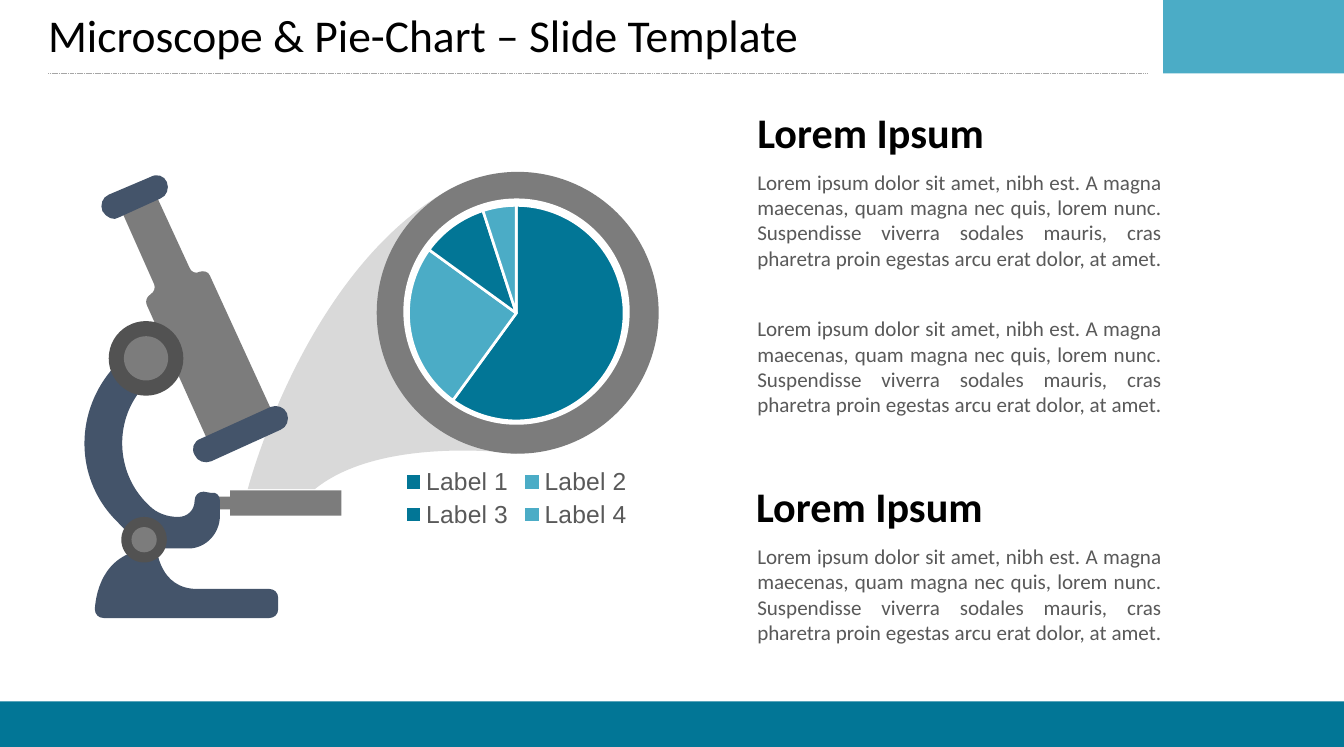
import pptx
import pptx.chart.data
import pptx.dml.color
import pptx.enum.chart
import pptx.enum.dml
import pptx.enum.shapes
import pptx.enum.text
import pptx.oxml
import pptx.util
from pptx.util import Inches

SHAPE = pptx.enum.shapes.MSO_SHAPE
ALIGN = pptx.enum.text.PP_ALIGN
ANCHOR = pptx.enum.text.MSO_ANCHOR
FIT = pptx.enum.text.MSO_AUTO_SIZE
NS_A = 'xmlns:a="http://schemas.openxmlformats.org/drawingml/2006/main"'
NS_C = 'xmlns:c="http://schemas.openxmlformats.org/drawingml/2006/chart"'
TEAL, SKY, NAVY = "027696", "4BACC6", "44546A"
GRAY, DARK, BEAM = "7C7C7C", "525252", "D9D9D9"
BLACK, WHITE, TEXT, RULE = "000000", "FFFFFF", "595959", "A6A6A6"

LOREM = ("Lorem ipsum dolor sit amet, nibh est. A magna maecenas, quam magna nec quis, "
         "lorem nunc. Suspendisse viverra sodales mauris, cras pharetra proin egestas "
         "arcu erat dolor, at amet. ")

# Outlines: a pair of numbers is a line to a point, six numbers are a cubic curve.
LIGHT_BEAM = [(1.96, 3.87), (1.96, 3.87, 2.41, 2.13, 3.57, 1.49), (4.09, 3.59),
              (4.09, 3.59, 3.02, 3.44, 2.49, 3.87)]
TUBE = [(1.22, 2.25), (0.94, 1.62), (1.21, 1.49), (1.5, 2.12),
        (1.51, 2.15, 1.55, 2.17, 1.58, 2.15), (1.61, 2.14, 1.65, 2.15, 1.66, 2.18),
        (2.2, 3.36), (1.69, 3.59), (1.16, 2.41),
        (1.15, 2.38, 1.16, 2.35, 1.19, 2.33), (1.22, 2.31, 1.23, 2.28, 1.22, 2.25)]
OBJECTIVE = [(1.67, 3.65), (2.22, 3.4), (2.27, 3.38, 2.29, 3.32, 2.27, 3.27),
             (2.25, 3.22, 2.19, 3.2, 2.14, 3.22), (1.59, 3.47),
             (1.53, 3.49, 1.51, 3.55, 1.54, 3.6), (1.56, 3.65, 1.62, 3.67, 1.67, 3.65)]
EYEPIECE = [(0.94, 1.72), (1.27, 1.57), (1.32, 1.55, 1.34, 1.49, 1.32, 1.44),
            (1.3, 1.39, 1.24, 1.37, 1.19, 1.4), (0.86, 1.54),
            (0.81, 1.56, 0.79, 1.62, 0.81, 1.67), (0.84, 1.72, 0.9, 1.75, 0.94, 1.72)]
STAGE = [(1.61, 3.93), (1.82, 3.93), (1.82, 3.88), (2.7, 3.88), (2.7, 4.08),
         (1.82, 4.08), (1.82, 4.03), (1.61, 4.03)]
BASE = [(2.13, 4.89), (0.82, 4.89), (0.78, 4.89, 0.75, 4.86, 0.75, 4.82),
        (0.76, 4.67, 0.83, 4.34, 1.24, 4.34), (1.24, 4.34, 1.26, 4.66, 1.56, 4.66),
        (2.13, 4.66), (2.17, 4.66, 2.2, 4.69, 2.2, 4.73), (2.2, 4.82),
        (2.2, 4.86, 2.17, 4.89, 2.13, 4.89)]
ARM = [(1.74, 3.96), (1.74, 4.08), (1.74, 4.22, 1.63, 4.34, 1.49, 4.34), (1.13, 4.34),
       (0.93, 4.13), (0.6, 3.81, 0.58, 3.29, 0.88, 2.93), (1, 2.78),
       (1.07, 2.7, 1.19, 2.71, 1.24, 2.8), (1.26, 2.86, 1.26, 2.92, 1.22, 2.96),
       (1.12, 3.08), (0.9, 3.34, 0.92, 3.74, 1.16, 3.98), (1.18, 4),
       (1.24, 4.06, 1.32, 4.09, 1.41, 4.09), (1.48, 4.09, 1.54, 4.04, 1.54, 3.96),
       (1.54, 3.92, 1.57, 3.89, 1.61, 3.89), (1.67, 3.9),
       (1.71, 3.89, 1.74, 3.92, 1.74, 3.96)]


def rgb(color):
    return pptx.dml.color.RGBColor.from_string(color)


def write(tf, text, size, color=BLACK, bold=False, align=ALIGN.LEFT,
          anchor=ANCHOR.TOP, spacing=None, fit=FIT.SHAPE_TO_FIT_TEXT):
    tf.word_wrap = True
    tf.auto_size = fit
    tf.vertical_anchor = anchor
    p = tf.paragraphs[0]
    p.alignment = align
    p.line_spacing = spacing
    r = p.add_run()
    r.text = text
    r.font.name = "Calibri"
    r.font.size = pptx.util.Pt(size)
    r.font.bold = bold
    r.font.color.rgb = rgb(color)


class Slide:
    def __init__(self, prs):
        self.s = prs.slides.add_slide(prs.slide_layouts[5])
        self.shapes = self.s.shapes

    def start_group(self):
        self.shapes = self.s.shapes.add_group_shape().shapes

    def end_group(self):
        self.shapes = self.s.shapes

    def paint(self, sp, color):
        sp.shadow.inherit = False
        sp.fill.solid()
        sp.fill.fore_color.rgb = rgb(color)
        sp.line.fill.background()

    def shape(self, kind, x, y, w, h, color):
        sp = self.shapes.add_shape(kind, Inches(x), Inches(y), Inches(w), Inches(h))
        self.paint(sp, color)

    def rect(self, x, y, w, h, color):
        self.shape(SHAPE.RECTANGLE, x, y, w, h, color)

    def disc(self, x, y, size, color):
        self.shape(SHAPE.OVAL, x, y, size, size, color)

    def outline(self, parts, x, y, w, h, color):
        """Draw a closed outline whose curves fill the box x, y, w, h."""
        ends = [(Inches(part[-2]), Inches(part[-1])) for part in parts]
        builder = self.shapes.build_freeform(*ends[0])
        builder.add_line_segments(ends[1:], close=True)
        sp = builder.convert_to_shape()
        sp.left, sp.top, sp.width, sp.height = map(Inches, (x, y, w, h))
        path = sp._element.xpath(".//a:path")[0]
        path.set("w", str(Inches(w)))
        path.set("h", str(Inches(h)))
        for i, (step, part) in enumerate(zip(list(path), parts)):
            tag = "moveTo" if i == 0 else "lnTo" if len(part) == 2 else "cubicBezTo"
            points = "".join(f'<a:pt x="{Inches(px - x)}" y="{Inches(py - y)}"/>'
                             for px, py in zip(part[::2], part[1::2]))
            path.replace(step, pptx.oxml.parse_xml(f"<a:{tag} {NS_A}>{points}</a:{tag}>"))
        self.paint(sp, color)

    def rule(self, x1, x2, y):
        line = self.shapes.add_connector(pptx.enum.shapes.MSO_CONNECTOR.STRAIGHT,
                                         Inches(x1), Inches(y), Inches(x2), Inches(y))
        line.line.color.rgb = rgb(RULE)
        line.line.width = pptx.util.Pt(0.25)
        line.line.dash_style = pptx.enum.dml.MSO_LINE.SQUARE_DOT
        line._element.spPr.append(pptx.oxml.parse_xml(f"<a:effectLst {NS_A}/>"))

    def title(self, text, x, y, w, h):
        sp = self.s.shapes.title
        sp.left, sp.top, sp.width, sp.height = map(Inches, (x, y, w, h))
        write(sp.text_frame, text, 25.9, anchor=ANCHOR.MIDDLE, spacing=0.8, fit=FIT.NONE)

    def text(self, text, x, y, w, h, size, **style):
        tf = self.shapes.add_textbox(Inches(x), Inches(y), Inches(w), Inches(h)).text_frame
        tf.margin_left = tf.margin_right = 0
        write(tf, text, size, **style)

    def heading(self, text, x, y):
        self.text(text, x, y, 3.21, 0.5, 24, bold=True, anchor=ANCHOR.BOTTOM)

    def body(self, text, y):
        self.text(text, 5.99, y, 3.2, 0.91, 12, color=TEXT, align=ALIGN.JUSTIFY)

    def pie(self, x, y, w, h, values, colors, plot):
        data = pptx.chart.data.CategoryChartData()
        data.categories = [f"Label {i}" for i in range(1, len(values) + 1)]
        data.add_series("Series 1", values)
        chart = self.shapes.add_chart(pptx.enum.chart.XL_CHART_TYPE.PIE, Inches(x),
                                      Inches(y), Inches(w), Inches(h), data).chart
        chart.has_title = False
        chart.font.name = "Arial"
        chart.font.size = pptx.util.Pt(10)
        chart.has_legend = True
        legend = chart.legend
        legend.position = pptx.enum.chart.XL_LEGEND_POSITION.BOTTOM
        legend.include_in_layout = False
        legend.font.name = "Arial"
        legend.font.size = pptx.util.Pt(14)
        legend.font.color.rgb = rgb(TEXT)
        for i in range(len(values)):
            fmt = chart.plots[0].series[0].points[i].format
            fmt.fill.solid()
            fmt.fill.fore_color.rgb = rgb(colors[i % len(colors)])
            fmt.line.color.rgb = rgb(WHITE)
            fmt.line.width = pptx.util.Pt(1.5)
        area = chart._chartSpace.chart.plotArea
        for old in area.xpath("c:layout"):
            area.remove(old)
        sizes = "".join(f'<c:{tag} val="{val}"/>' for tag, val in zip("xywh", plot))
        area.insert(0, pptx.oxml.parse_xml(
            f'<c:layout {NS_C}><c:manualLayout><c:layoutTarget val="inner"/>'
            f'<c:xMode val="edge"/><c:yMode val="edge"/>{sizes}</c:manualLayout></c:layout>'))


def main():
    prs = pptx.Presentation()
    prs.slide_width, prs.slide_height = Inches(10.63), Inches(5.91)
    s = Slide(prs)
    s.rule(0.38, 9.08, 0.58)
    s.rect(9.2, 0, 1.43, 0.58, SKY)
    s.title("Microscope & Pie-Chart – Slide Template", 0.28, 0.09, 8.49, 0.45)

    s.start_group()
    s.outline(LIGHT_BEAM, 1.96, 1.49, 2.14, 2.38, BEAM)
    s.outline(TUBE, 0.94, 1.49, 1.26, 2.1, GRAY)
    s.outline(OBJECTIVE, 1.53, 3.21, 0.75, 0.45, NAVY)
    s.outline(EYEPIECE, 0.8, 1.39, 0.52, 0.35, NAVY)
    s.outline(STAGE, 1.61, 3.88, 1.09, 0.2, GRAY)
    s.outline(BASE, 0.75, 4.34, 1.45, 0.56, NAVY)
    s.outline(ARM, 0.67, 2.73, 1.07, 1.61, NAVY)
    for x, y, size, color in [(0.86, 2.54, 0.59, DARK), (0.98, 2.66, 0.35, GRAY),
                              (0.96, 4.09, 0.36, DARK), (1.04, 4.17, 0.2, GRAY),
                              (2.98, 1.36, 2.23, GRAY), (3.19, 1.57, 1.79, WHITE)]:
        s.disc(x, y, size, color)
    s.end_group()

    s.pie(2.81, 1.44, 2.55, 2.78, (60, 25, 10, 5), (TEAL, SKY),
          plot=(0.165, 0.066, 0.669, 0.615))
    s.body(LOREM, 2.45)
    for x, y in ((5.98, 3.75), (5.99, 0.79)):
        s.heading("Lorem Ipsum", x, y)
        s.body(LOREM, y + 0.5)
    s.rect(0, 5.55, 10.63, 0.36, TEAL)
    prs.save("out.pptx")


if __name__ == "__main__":
    main()
